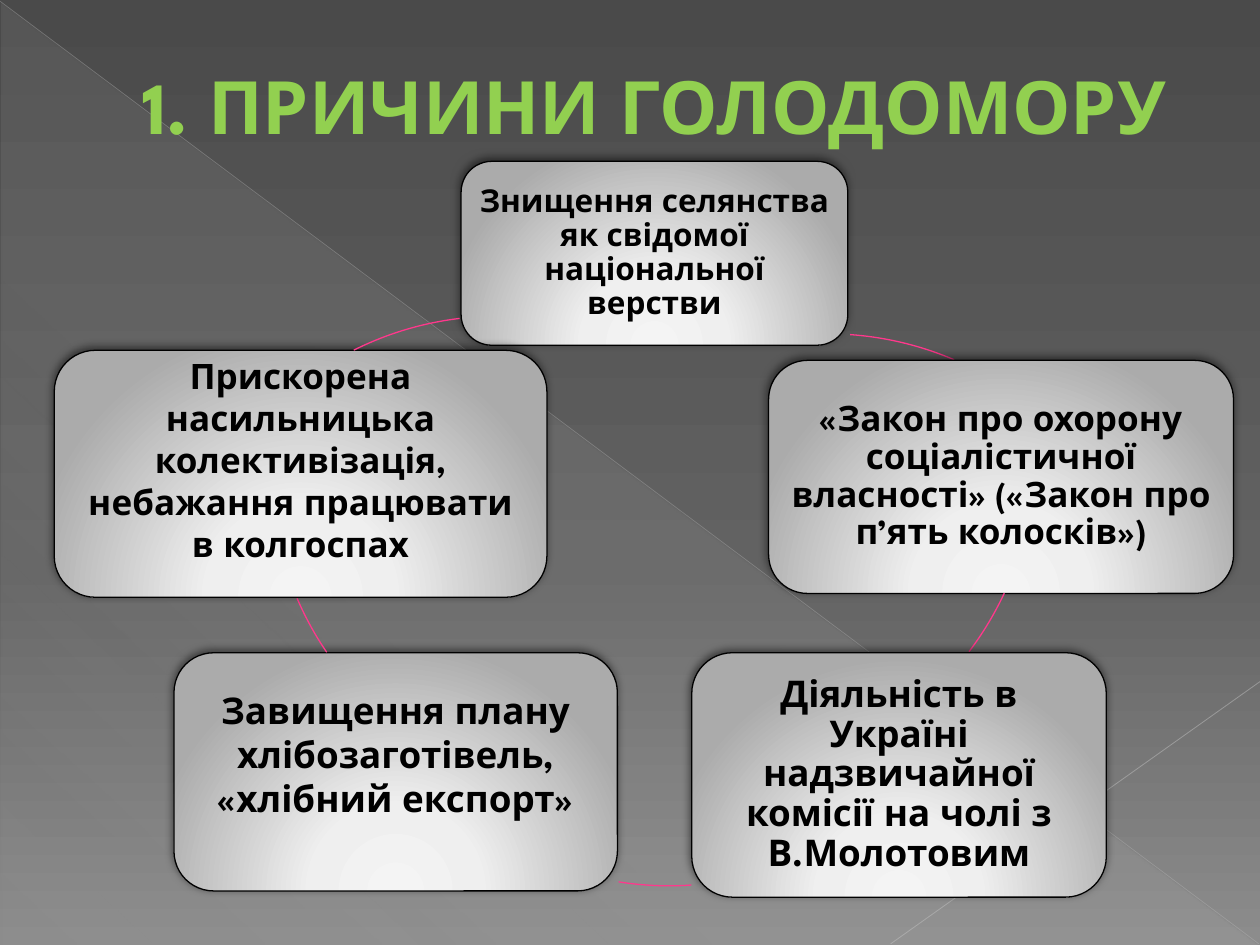
from lxml.etree import SubElement
from pptx import Presentation
from pptx.dml.color import RGBColor
from pptx.enum.shapes import MSO_CONNECTOR, MSO_SHAPE
from pptx.enum.text import MSO_ANCHOR, MSO_AUTO_SIZE, PP_ALIGN
from pptx.oxml.ns import qn
from pptx.util import Pt

FONT = "League Spartan"
PINK = "FF388C"
CARD = [(0, "F4F4F4"), (34, "EFEFEF"), (100, "ABABAB")]


def color(code):
    return RGBColor.from_string(code)


def node(parent, tag, **attrs):
    """Add a drawing element with the given attributes."""
    return SubElement(parent, qn(tag), {k: str(v) for k, v in attrs.items()})


def tint(parent, code, alpha=100):
    part = node(parent, "a:srgbClr", val=code)
    if alpha < 100:
        node(part, "a:alpha", val=alpha * 1000)


class Deck:
    def __init__(self, wide, high):
        self.prs = Presentation()
        self.prs.slide_width, self.prs.slide_height = Pt(wide), Pt(high)
        self.slide = self.prs.slides.add_slide(self.prs.slide_layouts[5])
        self.shapes = self.slide.shapes

    def blend(self, fill, root, stops, angle=None):
        """Gradient fill: linear with an angle, else round from the bottom."""
        fill.gradient()
        grad = root.find(".//" + qn("a:gradFill"))
        for child in list(grad):
            grad.remove(child)
        group = node(grad, "a:gsLst")
        for pos, code, *alpha in stops:
            tint(node(group, "a:gs", pos=pos * 1000), code, *alpha)
        if angle is None:
            way = node(grad, "a:path", path="circle")
            node(way, "a:fillToRect", l=50000, t=155000, r=50000, b=-55000)
        else:
            node(grad, "a:lin", ang=angle * 60000, scaled=0)

    def back(self, stops):
        self.blend(self.slide.background.fill, self.slide.element, stops, 90)

    def shape(self, kind, *area):
        item = self.shapes.add_shape(kind, *map(Pt, area))
        item.shadow.inherit = False
        return item

    def wedge(self, area, stops, angle):
        item = self.shape(MSO_SHAPE.RIGHT_TRIANGLE, *area)
        self.blend(item.fill, item.element.spPr, stops, angle)
        item.line.fill.background()

    def line(self, start, end, code, width, alpha):
        item = self.shapes.add_connector(
            MSO_CONNECTOR.STRAIGHT, *map(Pt, start + end))
        item.line.width = Pt(width)
        item.line.color.rgb = color(code)
        props = item.element.spPr
        node(props.find(".//" + qn("a:srgbClr")), "a:alpha", val=alpha * 1000)
        node(props, "a:effectLst")

    def arc(self, left, top, start, end, size=367.2):
        item = self.shape(MSO_SHAPE.ARC, left, top, size, size)
        # Angles are stored in 60000ths of a degree, scaled by 100000
        item.adjustments[0], item.adjustments[1] = start * 0.6, end * 0.6
        item.fill.background()
        item.line.color.rgb = color(PINK)
        item.line.width = Pt(0.75)

    def style(self, para, size, code):
        for run in para.runs:
            font = run.font
            font.name, font.size, font.bold = FONT, Pt(size), True
            font.color.rgb = color(code)

    def card(self, area, text, size, space, lift):
        item = self.shape(MSO_SHAPE.ROUNDED_RECTANGLE, *area)
        props = item.element.spPr
        self.blend(item.fill, props, CARD)
        item.line.color.rgb = color("000000")
        item.line.width = Pt(0.75)
        shade = node(props.find(qn("a:effectLst")), "a:outerShdw",
                     blurRad=Pt(5), dist=Pt(2), dir=245 * 60000, rotWithShape=0)
        tint(shade, "000000", 50)
        frame = item.text_frame
        frame.word_wrap = True
        frame.vertical_anchor = MSO_ANCHOR.MIDDLE
        inset = Pt(size * 0.3)
        frame.margin_left = frame.margin_right = frame.margin_top = inset
        frame.margin_bottom = inset + Pt(lift)
        frame.text = text
        para = frame.paragraphs[0]
        para.alignment = PP_ALIGN.CENTER
        para.line_spacing = space
        self.style(para, size, "000000")

    def title(self, area, text):
        item = self.shapes.title
        item.left, item.top, item.width, item.height = map(Pt, area)
        frame = item.text_frame
        frame.auto_size = MSO_AUTO_SIZE.NONE
        frame.vertical_anchor = MSO_ANCHOR.MIDDLE
        frame.text = text
        para = frame.paragraphs[0]
        para.alignment = PP_ALIGN.LEFT
        para._p.get_or_add_pPr().set("marL", str(Pt(38.16)))
        self.style(para, 42, "92D050")
        props = para.runs[0].font._element
        edge = node(props, "a:ln", w=Pt(0.5))
        tint(node(edge, "a:solidFill"), "B12761")
        props.insert(0, edge)
        # Bring the title in front of the decoration
        item.element.getparent().append(item.element)


# Area, text, size, line spacing, lift of the text, then the arc that follows
CAUSES = [
    ((263.5, 92.2, 221, 105.1),
     "Знищення селянства як свідомої національної верстви",
     18, 0.9, 0, (289.4, 190.8, 274, 293.2)),
    ((439.2, 205.9, 265.7, 133.2),
     "«Закон про охорону соціалістичної власності» («Закон про п’ять колосків»)",
     20, 0.9, 0, (223.9, 77.8, 25, 37.2)),
    ((395.3, 373, 236.9, 139.7),
     "Діяльність в Україні надзвичайної комісії на чолі з В.Молотовим",
     21, 0.9, 0, (198.7, 139, 86, 99)),
    ((99.4, 373, 253.4, 136.1),
     "Завищення плану хлібозаготівель, «хлібний експорт»",
     21, 1.0, 21, (154.8, 85.7, 145.7, 156.7)),
    ((31, 200.2, 281.5, 141.1),
     "Прискорена насильницька колективізація, небажання працювати в колгоспах",
     20, 1.0, 16, (100.8, 180.7, 243.4, 263.2)),
]


def main():
    deck = Deck(720, 540)

    # Backdrop
    deck.back([(0, "4A4A4A"), (60, "626262"), (100, "8C8C8C")])
    deck.wedge((0.7, 1.4, 718.6, 538.6),
               [(0, "D2D2D2", 10), (70, "D2D2D2", 8), (100, "D2D2D2", 1)], 133)
    deck.line((0, 0.7), (719.3, 539.3), "BFBFBF", 0.39, 35)
    deck.line((720, 389.5), (509, 539.3), "C6C6C6", 0.47, 45)

    # Ring of causes
    for area, text, size, space, lift, arc in CAUSES:
        deck.card(area, text, size, space, lift)
        deck.arc(*arc)

    # Heading
    deck.title((36, 20.9, 648, 78.5), "1. ПРИЧИНИ ГОЛОДОМОРУ")
    deck.prs.save("out.pptx")


if __name__ == "__main__":
    main()
